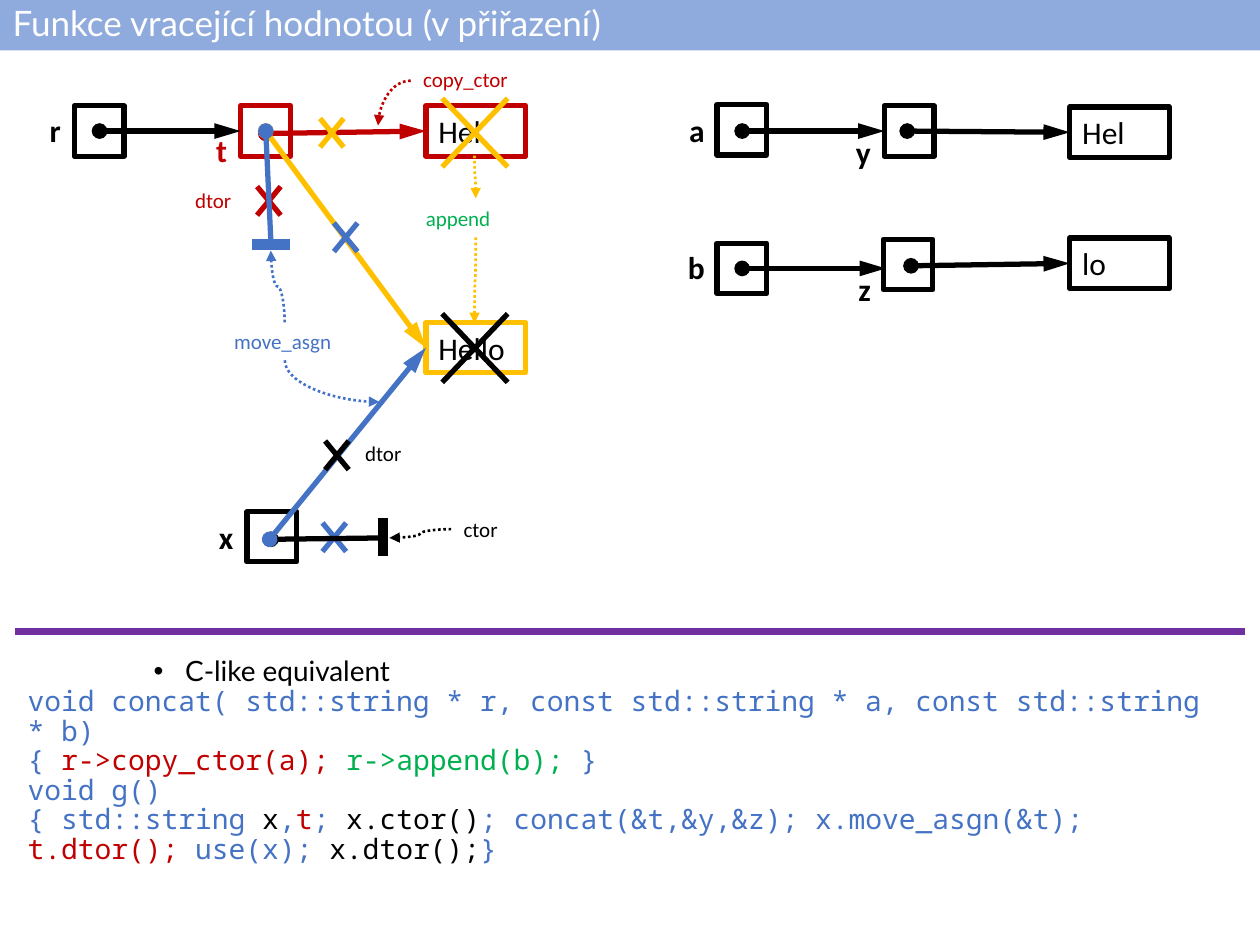
from lxml import etree
from pptx import Presentation
from pptx import util as u
from pptx.dml import color as colour
from pptx.enum import dml, shapes, text
from pptx.oxml import ns

COLOURS = {
    "black": "000000", "white": "FFFFFF", "red": "C00000", "green": "00B050",
    "blue": "4472C4", "yellow": "FFC000", "purple": "7030A0", "banner": "8FAADC",
}
LEFT_SIDE = 1
CELL_SIZE, VALUE_SIZE, NAME_SIZE = (28.4, 28.8), (56.9, 28.8), (33.8, 28.8)
NOTE_HEIGHT = 21.6
SMALL, STRIP = (13.5, 16.4), (37.4, 39.2)

RESULT = {
    "cells": {"r": (34.5, 28.5, "black"), "t": (129.5, 28.5, "red"), "x": (133.1, 260.3, "black")},
    "values": {"Hel": (235.4, 28.5, "red"), "Hello": (235.4, 152.3, "yellow")},
    "names": {"r": (0, 27.8, "black"), "t": (95, 39.3, "red"), "x": (98.6, 260.3, "black")},
    "notes": [
        ("copy_ctor", 226.7, 2.6, 71.3, "red"), ("append", 228.2, 81.8, 71.3, "green"),
        ("ctor", 249.8, 259.6, 51, "black"), ("move_asgn", 118.7, 152.3, 72, "blue"),
        ("dtor", 193.6, 216.4, 41, "black"), ("dtor", 96.4, 71.7, 41, "red"),
    ],
    "crosses_below": [(176.3, 266.8, SMALL, "blue"), (138.9, 74.6, SMALL, "red")],
    "pointers": [
        ((143.9, 44.3), "Hel", "red"), ((146.8, 276.2), (210.9, 275.4), "black"),
        ((143.9, 42.9), "Hello", "yellow"), ((48.9, 42.9), "t", "black"),
        ((146.1, 276.2), "Hello", "blue"), ((143.9, 42.9), (146.8, 106.2), "blue"),
    ],
    "null_bars": [
        ((210.9, 285.5), (210.9, 263.9), "black"), ((136, 107.7), (157.6, 107.7), "blue"),
    ],
    "crosses_above": [
        (174.9, 35.7, SMALL, "yellow"), (182.8, 95.4, SMALL, "blue"), (177.8, 220, SMALL, "black"),
        (244.7, 24.2, STRIP, "yellow"), (244.7, 147.3, STRIP, "black"),
    ],
    "curves": [
        (208, 14.1, 18.7, 25.6, 180, "flipV", 2, "red"),
        (214.5, 270.4, 35.3, 5, 180, "flipV", 3, "black"),
        (251.2, 68.8, 24.5, 0.7, 270, "flipH", 3, "yellow"),
        (239, 127.8, 49, 0.7, 90, None, 3, "yellow"),
        (130.2, 127.8, 41, 7.9, 270, "flipV", 3, "blue"),
        (169.8, 158.8, 23.8, 54, 270, "flipH", 2, "blue"),
    ],
}
ARGUMENTS = {
    "cells": {"a": (33.7, 1.8, "black"), "b": (33.7, 81, "black"),
              "y": (129.4, 2.5, "black"), "z": (128.7, 78.8, "black")},
    "values": {"Hel": (235.3, 3.2, "black"), "lo": (235.3, 78.1, "black")},
    "names": {"a": (0, 1.8, "black"), "b": (0, 80.2, "black"),
              "y": (94.9, 14.7, "black"), "z": (94.9, 92.5, "black")},
    "pointers": [
        ((48.1, 16.9), "y", "black"), ((48.1, 95.4), (130.2, 95.4), "black"),
        ((142.4, 16.9), "Hel", "black"), ((144.6, 93.9), "lo", "black"),
    ],
}
CODE = [
    [("void concat( std::string * r, const std::string * a, const std::string * b)", "blue")],
    [("{ ", "blue"), ("r->copy_ctor(a); ", "red"), ("r->append(b); ", "green"), ("}", "blue")],
    [("void g()", "blue")],
    [("{ std::string ", "blue"), ("x", "black"), (",", "blue"), ("t", "red"), ("; ", "blue"),
     ("x.ctor()", "black"), ("; concat(&t,&y,&z); x.move_asgn(&t); ", "blue"),
     ("t.dtor(); ", "red"), ("use(x); ", "blue"), ("x.dtor();", "black"), ("}", "blue")],
]


def apply(target, values):
    """Set each named attribute on the target."""
    for name, value in values.items():
        setattr(target, name, value)


def rgb(name):
    """Return the named colour."""
    return colour.RGBColor.from_string(COLOURS[name])


def place(shape, left, top, width, height):
    """Move and size a shape in points."""
    apply(shape, {"left": u.Pt(left), "top": u.Pt(top), "width": u.Pt(width), "height": u.Pt(height)})


def add_span(para, words, size, font, tint, bold=False):
    """Add one formatted run."""
    span = para.add_run()
    span.text = words
    apply(span.font, {"size": u.Pt(size), "name": font, "bold": bold})
    span.font.color.rgb = rgb(tint)


def write(shape, words, size, tint, bold=False, align=text.PP_ALIGN.LEFT):
    """Write one line of label text into a shape."""
    apply(shape.text_frame, {"word_wrap": True, "auto_size": text.MSO_AUTO_SIZE.SHAPE_TO_FIT_TEXT})
    para = shape.text_frame.paragraphs[0]
    para.alignment = align
    add_span(para, words, size, "Calibri", tint, bold)


def add_box(page, left, top, size, tint):
    """Add an outlined rectangle without fill."""
    box = page.shapes.add_shape(shapes.MSO_SHAPE.RECTANGLE, *map(u.Pt, (left, top, *size)))
    box.shadow.inherit = False
    box.fill.background()
    box.line.width = u.Pt(3)
    box.line.color.rgb = rgb(tint)
    return box


def add_label(page, left, top, size, words, points, tint, **style):
    """Add a text box with one line."""
    label = page.shapes.add_textbox(*map(u.Pt, (left, top, *size)))
    write(label, words, points, tint, **style)


def add_line(parent, start, end, tint, width=3, kind=shapes.MSO_CONNECTOR.STRAIGHT):
    """Add a connector without shadow."""
    line = parent.shapes.add_connector(kind, *map(u.Pt, (*start, *end)))
    line.line.width = u.Pt(width)
    line.line.color.rgb = rgb(tint)
    etree.SubElement(line._element.spPr, ns.qn("a:effectLst"))
    return line


def add_end(line, tag, kind, length="med"):
    """Put an arrowhead on a connector."""
    outline = line.line._get_or_add_ln()
    etree.SubElement(outline, ns.qn(tag), type=kind, w="med", len=length)


def add_cross(page, left, top, size, tint):
    """Add a grouped pair of crossing strokes."""
    group = page.shapes.add_group_shape()
    right, bottom = left + size[0], top + size[1]
    add_line(group, (right, top), (left, bottom), tint)
    add_line(group, (left, top), (right, bottom), tint)


def add_curve(page, left, top, width, height, turn, flip, bends, tint):
    """Add a dotted curved arrow, turned and flipped."""
    curve = add_line(page, (left, top), (left + width, top + height), tint, 1.5, shapes.MSO_CONNECTOR.CURVE)
    curve.line.dash_style = dml.MSO_LINE.ROUND_DOT
    add_end(curve, "a:tailEnd", "triangle")
    frame = curve._element.spPr.find(ns.qn("a:xfrm"))
    frame.set("rot", str(turn * 60000))
    if flip:
        frame.set(flip, "1")
    curve._element.spPr.find(ns.qn("a:prstGeom")).set("prst", f"curvedConnector{bends}")


def draw_diagram(page, box, parts):
    """Draw a pointer diagram inside the given box."""
    def at(x, y):
        return box[0] + x, box[1] + y

    nodes = {}
    for name, (x, y, tint) in parts["cells"].items():
        nodes[name] = add_box(page, *at(x, y), CELL_SIZE, tint)
    for words, (x, y, tint) in parts["values"].items():
        nodes[words] = add_box(page, *at(x, y), VALUE_SIZE, tint)
        write(nodes[words], words, 18, "black")
    for name, (x, y, tint) in parts["names"].items():
        add_label(page, *at(x, y), NAME_SIZE, name, 18, tint, bold=True, align=text.PP_ALIGN.RIGHT)
    for words, x, y, width, tint in parts.get("notes", []):
        add_label(page, *at(x, y), (width, NOTE_HEIGHT), words, 12, tint)
    for x, y, size, tint in parts.get("crosses_below", []):
        add_cross(page, *at(x, y), size, tint)
    null_ends = parts.get("null_bars", [])
    for start, end, tint in parts["pointers"]:
        target = nodes.get(end)
        line = add_line(page, at(*start), at(*start) if target else at(*end), tint)
        add_end(line, "a:headEnd", "oval")
        if target:
            line.end_connect(target, LEFT_SIDE)
        if target or not null_ends:
            add_end(line, "a:tailEnd", "triangle", "lg")
    for start, end, tint in null_ends:
        add_line(page, at(*start), at(*end), tint, 6)
    for x, y, size, tint in parts.get("crosses_above", []):
        add_cross(page, *at(x, y), size, tint)
    for x, y, *rest in parts.get("curves", []):
        add_curve(page, *at(x, y), *rest)


def draw_title(page, box):
    """Fill the title banner."""
    title = page.shapes.title
    place(title, *box)
    title.fill.solid()
    title.fill.fore_color.rgb = rgb("banner")
    apply(title.text_frame, {"vertical_anchor": text.MSO_ANCHOR.MIDDLE, "auto_size": text.MSO_AUTO_SIZE.NONE})
    para = title.text_frame.paragraphs[0]
    apply(para, {"alignment": text.PP_ALIGN.LEFT, "line_spacing": 0.9})
    add_span(para, "Funkce vracející hodnotou (v přiřazení)", 20, "Lato", "white")


def draw_code(page, box):
    """Fill the body with the rule, the bullet and the code lines."""
    left, top, width, height = box
    add_line(page, (left, top - 11.5), (left + width, top - 11.5), "purple", 4)
    body = page.placeholders[1]
    place(body, *box)
    frame = body.text_frame
    apply(frame, {"auto_size": text.MSO_AUTO_SIZE.NONE, "vertical_anchor": text.MSO_ANCHOR.TOP})
    para = frame.paragraphs[0]
    apply(para, {"level": 2, "line_spacing": 0.9, "space_before": u.Pt(5)})
    props = para._p.get_or_add_pPr()
    props.set("marL", str(u.Pt(90)))
    props.set("indent", str(u.Pt(-18)))
    etree.SubElement(props, ns.qn("a:buChar"), char="•")
    add_span(para, "C-like equivalent", 16, "Lato", "black")
    for spans in CODE:
        para = frame.add_paragraph()
        apply(para, {"level": 4, "line_spacing": 0.88, "space_before": u.Pt(0)})
        props = para._p.get_or_add_pPr()
        props.set("marL", "0")
        props.set("indent", "0")
        etree.SubElement(props, ns.qn("a:buNone"))
        for words, tint in spans:
            add_span(para, words, 16, "Noto Sans Mono", tint)


def main():
    """Build and save the deck."""
    deck = Presentation()
    apply(deck, {"slide_width": u.Pt(720), "slide_height": u.Pt(540)})
    page = deck.slides.add_slide(deck.slide_layouts[1])
    draw_code(page, (8.6, 372.2, 702.7, 136.1))
    draw_title(page, (0, 0, 720, 28.8))
    draw_diagram(page, (8, 32), RESULT)
    draw_diagram(page, (376, 58), ARGUMENTS)
    deck.save("out.pptx")


if __name__ == "__main__":
    main()
